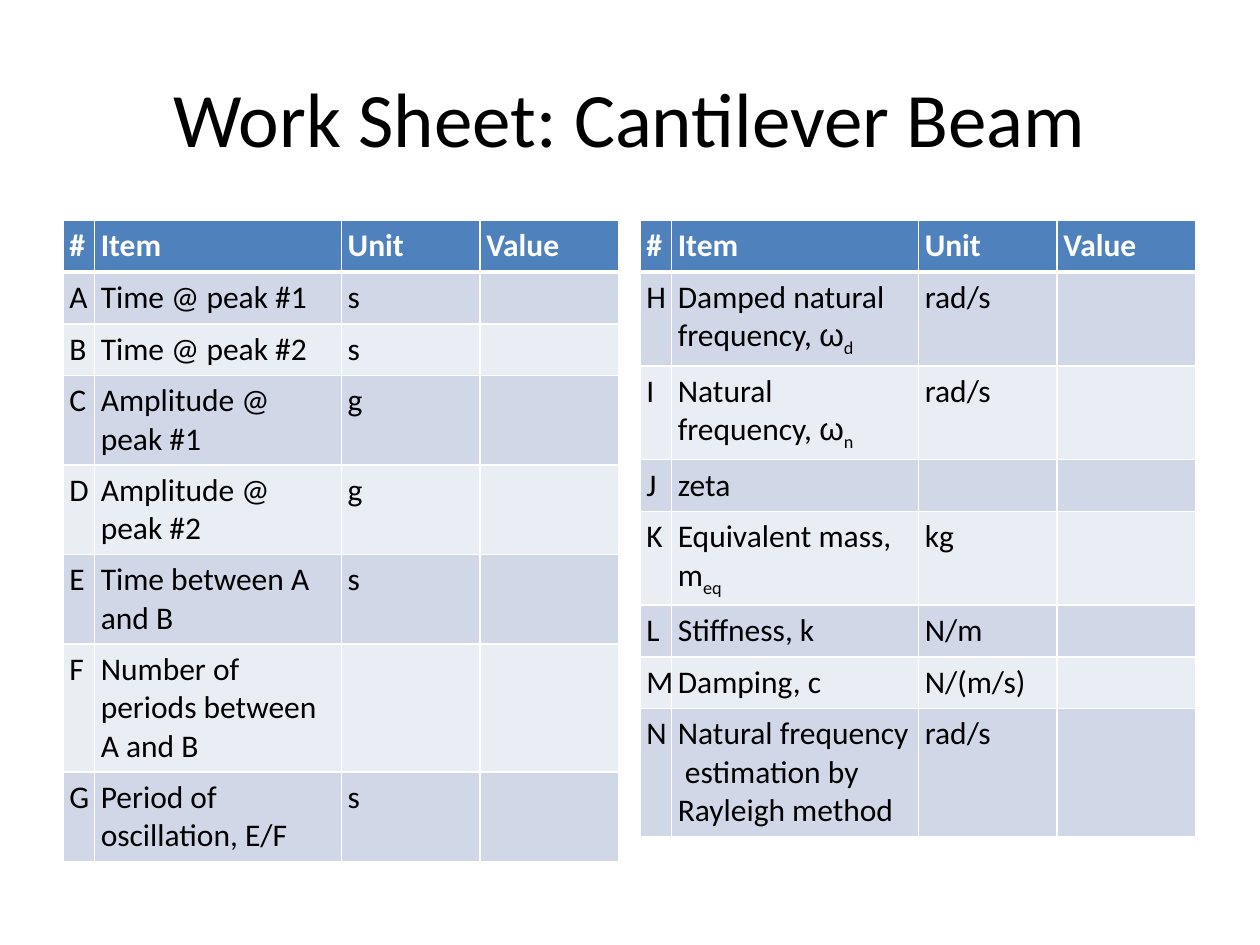
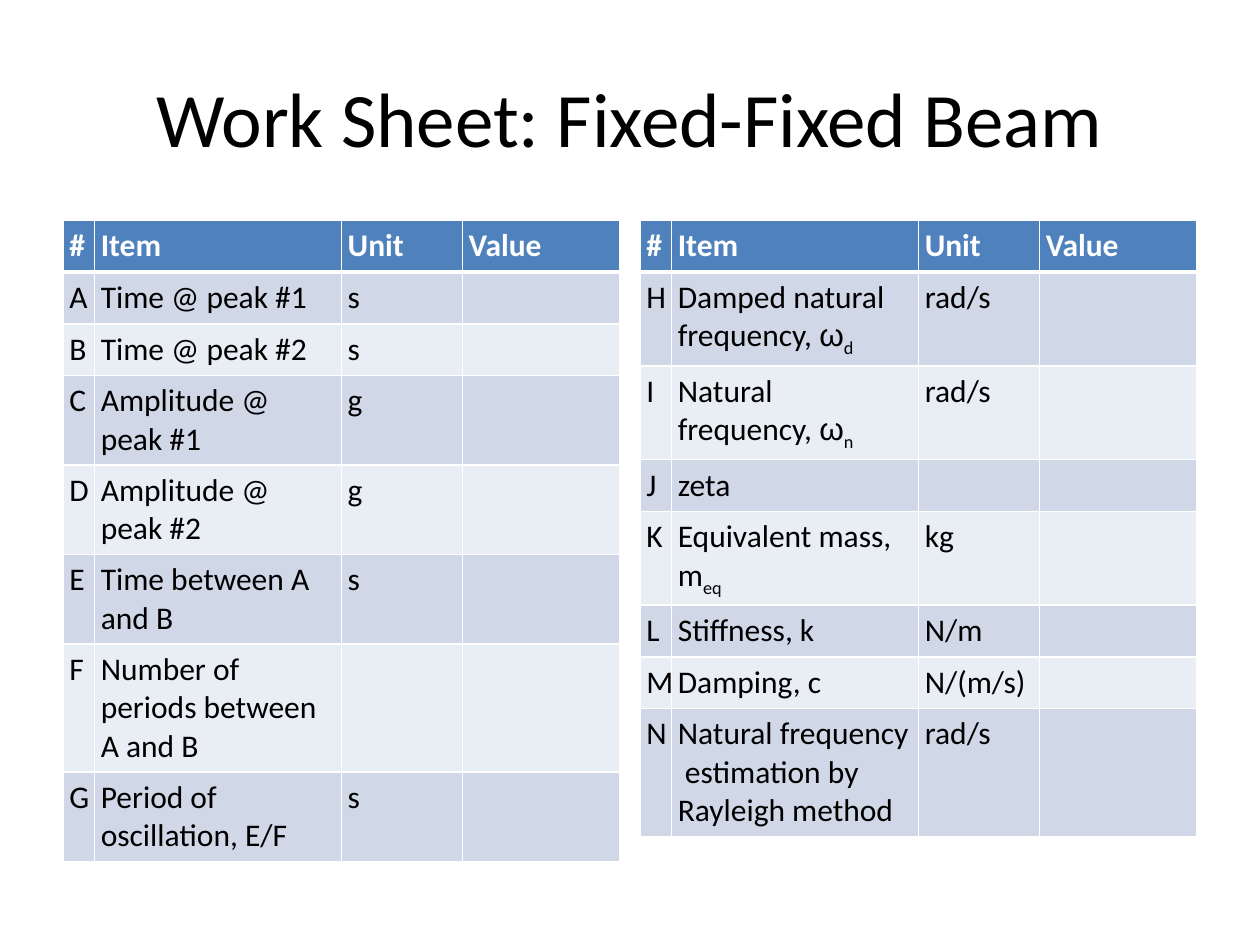
import pptx
import pptx.dml.color
import pptx.enum.text
import pptx.util
from lxml import etree
from pptx.oxml.ns import qn

Inches = pptx.util.Inches
Pt = pptx.util.Pt

WHITE = "FFFFFF"
BLACK = "000000"
HEADER_BLUE = "4F81BD"
BANDS = ["D0D8E8", "E9EDF4"]
ROW_HEIGHT = 0.41
CELL_MARGIN = 0.05

header = ("#", ["Item"], "Unit", "Value")
measured_rows = [
    header,
    ("A", ["Time @ peak #1"], "s", ""),
    ("B", ["Time @ peak #2"], "s", ""),
    ("C", ["Amplitude @ peak #1"], "g", ""),
    ("D", ["Amplitude @ peak #2"], "g", ""),
    ("E", ["Time between A and B"], "s", ""),
    ("F", ["Number of periods between A and B"], "", ""),
    ("G", ["Period of oscillation, E/F"], "s", ""),
]
derived_rows = [
    header,
    ("H", ["Damped natural frequency, ", "ω", "d"], "rad/s", ""),
    ("I", ["Natural frequency, ", "ω", "n"], "rad/s", ""),
    ("J", ["zeta"], "", ""),
    ("K", ["Equivalent mass, m", "eq"], "kg", ""),
    ("L", ["Stiffness, k"], "N/m", ""),
    ("M", ["Damping, c"], "N/(m/s)", ""),
    ("N", ["Natural frequency  estimation by Rayleigh method"], "rad/s", ""),
]
tables = [(0.5, 5.02, measured_rows), (5.08, 4.72, derived_rows)]
worksheets = [
    ("Work Sheet: Cantilever Beam", [0.25, 1.96, 1.1, 1.1]),
    ("Work Sheet: Fixed-Fixed Beam", [0.25, 1.96, 0.96, 1.25]),
]


def color(hex_string):
    return pptx.dml.color.RGBColor.from_string(hex_string)


def add_run(paragraph, text, size, hex_string, bold=False):
    run = paragraph.add_run()
    run.text = text
    run.font.name = "Arial" if text == "ω" else "Calibri"
    run.font.size = Pt(size)
    run.font.bold = bold
    run.font.color.rgb = color(hex_string)
    return run


presentation = pptx.Presentation()
presentation.slide_width = Inches(10)
presentation.slide_height = Inches(7.5)

for title_text, column_widths in worksheets:
    slide = presentation.slides.add_slide(presentation.slide_layouts[5])
    title = slide.shapes.title
    title.left, title.top = Inches(0.5), Inches(0.3)
    title.width, title.height = Inches(9), Inches(1.25)
    title.text_frame.vertical_anchor = pptx.enum.text.MSO_ANCHOR.MIDDLE
    title_paragraph = title.text_frame.paragraphs[0]
    title_paragraph.alignment = pptx.enum.text.PP_ALIGN.CENTER
    add_run(title_paragraph, title_text, 44, BLACK)

    for left, height, rows in tables:
        frame = slide.shapes.add_table(
            len(rows), len(header), Inches(left), Inches(1.75), Inches(4.42), Inches(height)
        )
        table = frame.table
        for column, width in zip(table.columns, column_widths):
            column.width = Inches(width)
        for row in table.rows:
            row.height = Inches(ROW_HEIGHT)
        frame.height = Inches(height)

        for row_index, values in enumerate(rows):
            is_header = row_index == 0
            fill_color = HEADER_BLUE if is_header else BANDS[(row_index - 1) % 2]
            border_widths = {
                "a:lnL": 1,
                "a:lnR": 1,
                "a:lnT": 3 if row_index == 1 else 1,
                "a:lnB": 3 if is_header else 1,
            }
            for column_index, value in enumerate(values):
                cell = table.cell(row_index, column_index)
                cell.margin_left = cell.margin_right = Inches(CELL_MARGIN)
                cell.margin_top = cell.margin_bottom = Inches(CELL_MARGIN)

                cell_properties = cell._tc.get_or_add_tcPr()
                for tag, width in border_widths.items():
                    border = etree.SubElement(cell_properties, qn(tag), w=str(Pt(width)))
                    border_fill = etree.SubElement(border, qn("a:solidFill"))
                    etree.SubElement(border_fill, qn("a:srgbClr"), val=WHITE)
                cell.fill.solid()
                cell.fill.fore_color.rgb = color(fill_color)

                paragraph = cell.text_frame.paragraphs[0]
                paragraph.font.size = Pt(18)
                pieces = value if isinstance(value, list) else [value]
                for piece_index, piece in enumerate(pieces):
                    if piece:
                        run = add_run(paragraph, piece, 18, WHITE if is_header else BLACK, is_header)
                        if piece_index > 0 and piece != "ω":
                            run._r.get_or_add_rPr().set("baseline", "-25000")

presentation.save("out.pptx")
